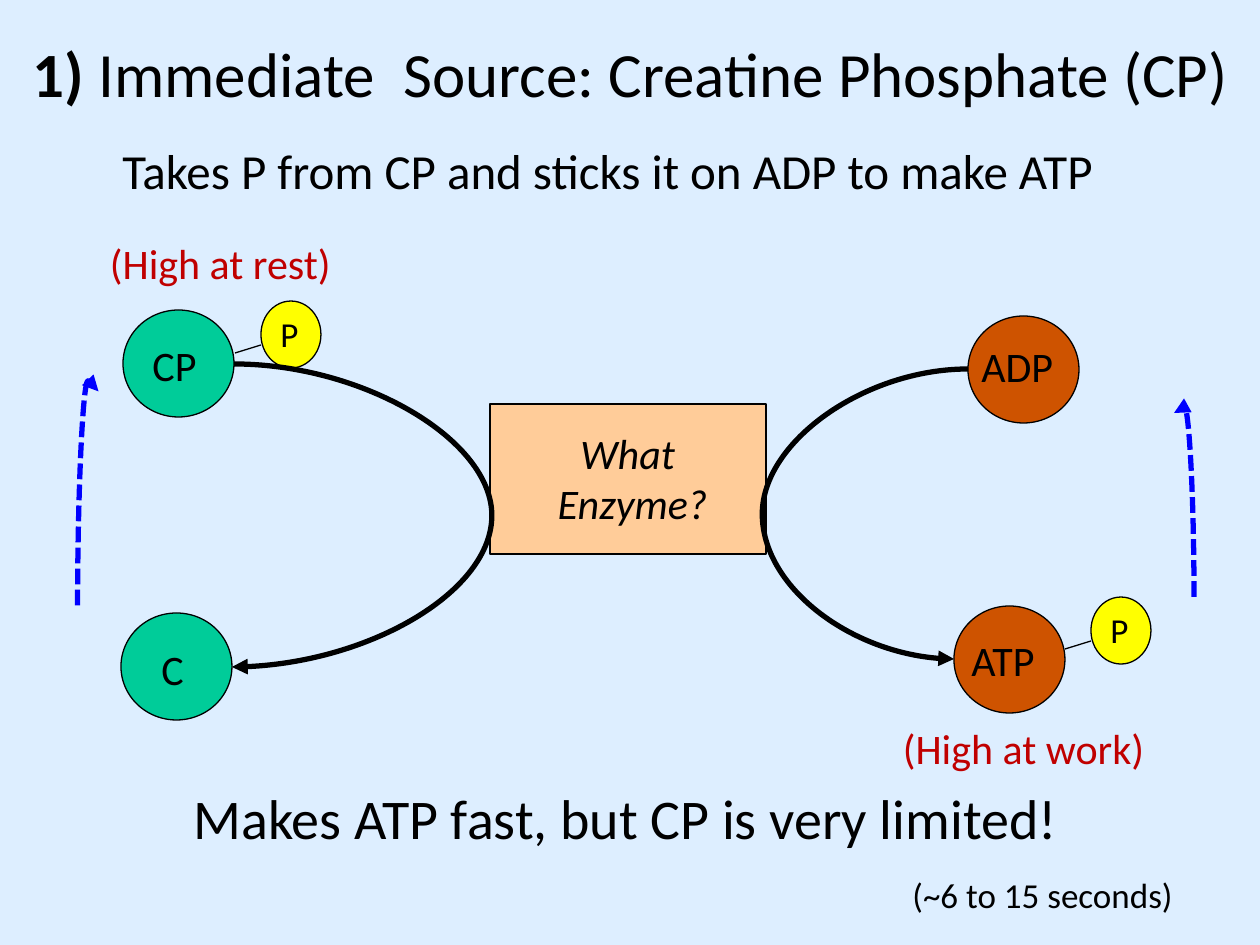
"""Builds the slide on creatine phosphate as the immediate source of ATP."""
from typing import NamedTuple

from lxml.etree import SubElement
from pptx import Presentation
from pptx.dml.color import RGBColor as Rgb
from pptx.enum.dml import MSO_LINE_DASH_STYLE as Dash
from pptx.enum.shapes import MSO_CONNECTOR as Link, MSO_SHAPE as Form
from pptx.enum.text import MSO_ANCHOR as Anchor, PP_ALIGN as Align
from pptx.oxml.ns import qn
from pptx.util import Pt

SCALE = 914400 / 126
BLACK = Rgb(0x00, 0x00, 0x00)
SKY = Rgb(0xDD, 0xEE, 0xFF)
PEACH = Rgb(0xFF, 0xCC, 0x99)
GREEN = Rgb(0x00, 0xCC, 0x99)
RUST = Rgb(0xCE, 0x53, 0x00)
YELLOW = Rgb(0xFF, 0xFF, 0x00)
RED = Rgb(0xC0, 0x00, 0x00)
BLUE = Rgb(0x00, 0x00, 0xFF)


class Box(NamedTuple):
    x: int
    y: int
    w: int
    h: int


class Ball(NamedTuple):
    x: int
    y: int
    fill: Rgb
    name: str
    label: Box


class Bond(NamedTuple):
    x: int
    y: int


class Curve(NamedTuple):
    box: Box
    bend: int
    turn: int = 0
    flips: tuple = ()
    color: Rgb = BLACK
    dashed: bool = False


BALLS = [
    Ball(123, 310, GREEN, "CP", Box(140, 333, 69, 64)),
    Ball(121, 613, GREEN, "C", Box(149, 637, 48, 64)),
    Ball(968, 316, RUST, "ADP", Box(969, 334, 98, 64)),
    Ball(954, 606, RUST, "ATP", Box(959, 628, 89, 64)),
]
BONDS = [Bond(235, 353), Bond(1065, 649)]
CURVES = [
    Curve(Box(232, 364, 2, 303), -13000, flips=("flipH",)),
    Curve(Box(954, 369, 14, 290), 1471, 180, ("flipV",)),
    Curve(Box(1092, 495, 184, 20), 104, 270, ("flipV",), BLUE, True),
    Curve(Box(-19, 488, 214, 21), 105, 90, ("flipH", "flipV"), BLUE, True),
]


def emu(px: int) -> int:
    return round(px * SCALE)


def write(slide, box: Box, text: str, size: int, color: Rgb = BLACK,
          align=Align.LEFT, anchor=Anchor.TOP, wrap: bool = False,
          italic: bool = False, lead: str = "") -> None:
    frame = slide.shapes.add_textbox(*map(emu, box)).text_frame
    frame.word_wrap = wrap
    frame.vertical_anchor = anchor
    for i, line in enumerate(text.split("\n")):
        para = frame.add_paragraph() if i else frame.paragraphs[0]
        para.alignment = align
        for part, bold in ((lead, True), (line, False)):
            if part:
                run = para.add_run()
                run.text = part
                font = run.font
                font.name, font.size = "Calibri", Pt(size)
                font.bold, font.italic = bold, italic
                font.color.rgb = color


def block(slide, form, box: Box, fill: Rgb) -> None:
    shape = slide.shapes.add_shape(form, *map(emu, box))
    shape.shadow.inherit = False
    shape.fill.solid()
    shape.fill.fore_color.rgb = fill
    shape.line.color.rgb = BLACK
    shape.line.width = Pt(0.75)


def link(slide, kind, box: Box, color: Rgb, width: float):
    x, y, w, h = box
    wire = slide.shapes.add_connector(kind, *map(emu, (x, y, x + w, y + h)))
    wire.line.color.rgb = color
    wire.line.width = Pt(width)
    SubElement(wire.element.spPr, qn("a:effectLst"))
    return wire


def draw_ball(slide, ball: Ball) -> None:
    block(slide, Form.OVAL, Box(ball.x, ball.y, 111, 107), ball.fill)
    write(slide, ball.label, ball.name, 24)


def draw_bond(slide, bond: Bond) -> None:
    x, y = bond
    block(slide, Form.OVAL, Box(x + 26, y - 52, 60, 67), YELLOW)
    write(slide, Box(x + 33, y - 47, 45, 54), "P", 20)
    link(slide, Link.STRAIGHT, Box(x, y, 26, -8), BLACK, 0.75)


def draw_curve(slide, curve: Curve) -> None:
    wire = link(slide, Link.CURVE, curve.box, curve.color, 3)
    props = wire.element.spPr
    frame = props.find(qn("a:xfrm"))
    frame.set("rot", str(curve.turn * 60000))
    for flip in curve.flips:
        frame.set(flip, "1")
    guide = SubElement(props.find(qn("a:prstGeom")).find(qn("a:avLst")), qn("a:gd"))
    guide.set("name", "adj1")
    guide.set("fmla", f"val {curve.bend * 1000}")
    if curve.dashed:
        wire.line.dash_style = Dash.SQUARE_DOT
    SubElement(props.find(qn("a:ln")), qn("a:tailEnd")).set("type", "triangle")


def main() -> None:
    deck = Presentation()
    deck.slide_width, deck.slide_height = emu(1260), emu(945)
    slide = deck.slides.add_slide(deck.slide_layouts[6])
    slide.background.fill.solid()
    slide.background.fill.fore_color.rgb = SKY

    write(slide, Box(11, 11, 1239, 123), " Immediate  Source: Creatine Phosphate (CP)",
          36, align=Align.CENTER, anchor=Anchor.MIDDLE, wrap=True, lead="1)")
    write(slide, Box(110, 134, 1050, 69),
          "Takes P from CP and sticks it on ADP to make ATP", 28, wrap=True)
    block(slide, Form.RECTANGLE, Box(490, 404, 276, 150), PEACH)
    write(slide, Box(543, 421, 179, 115), "What \nEnzyme?", 24,
          align=Align.CENTER, italic=True)
    for bond in BONDS:
        draw_bond(slide, bond)
    for ball in BALLS:
        draw_ball(slide, ball)
    for curve in CURVES:
        draw_curve(slide, curve)
    write(slide, Box(181, 777, 906, 95), "Makes ATP fast, but CP is very limited!",
          32, wrap=True)
    write(slide, Box(900, 867, 296, 55), "(~6 to 15 seconds)", 20)
    write(slide, Box(88, 231, 258, 63), " (High at rest)", 24, RED)
    write(slide, Box(881, 716, 278, 63), " (High at work)", 24, RED)
    deck.save("out.pptx")


if __name__ == "__main__":
    main()
